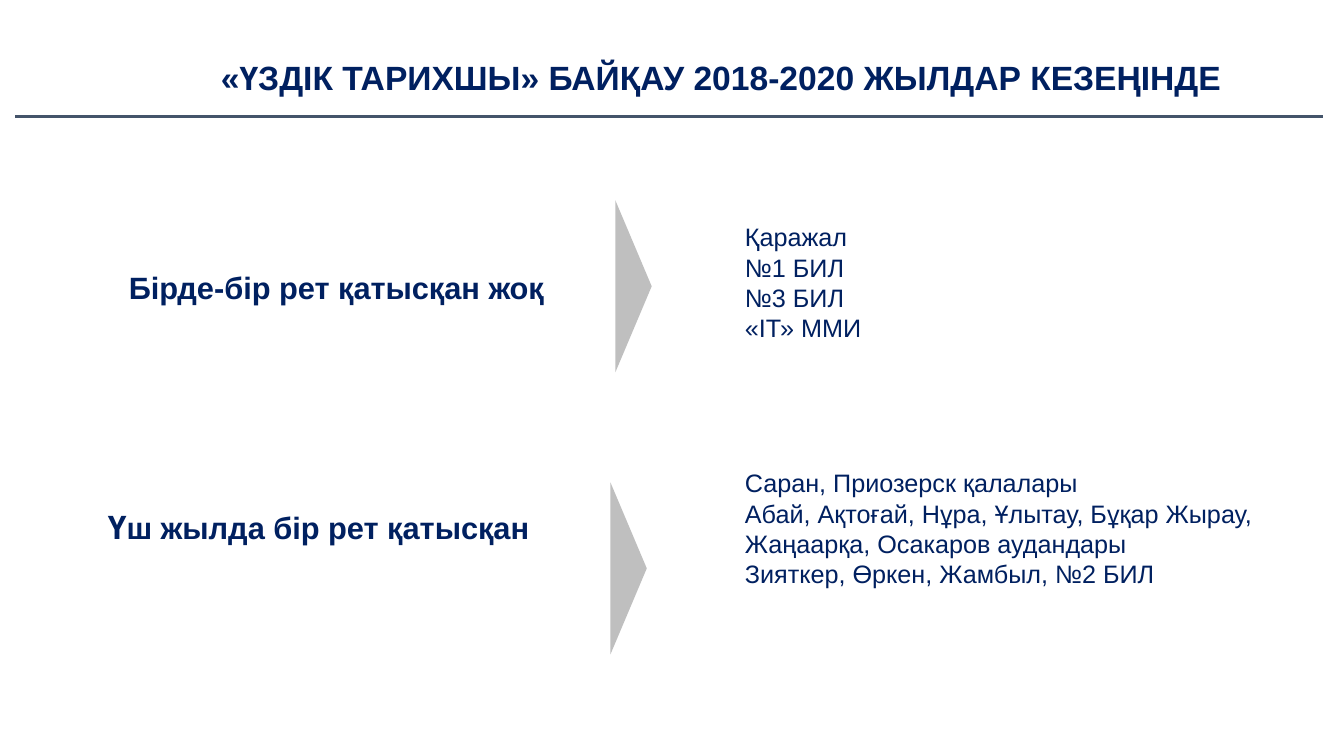
import pptx
import pptx.util
import pptx.dml.color
import pptx.enum.shapes
import pptx.enum.text
import pptx.oxml
from dataclasses import dataclass

Pt = pptx.util.Pt
RGB = pptx.dml.color.RGBColor.from_string


@dataclass(frozen=True)
class Theme:
    font: str = "Arial"
    navy: str = "002060"
    rule: str = "44546A"
    arrow: str = "BFBFBF"
    title: float = 24
    label: float = 22
    body: float = 18


THEME = Theme()

# Offsets are measured from the row box, in points.
ROWS = [
    dict(box=(70, 143, 837, 123), label_at=(15, 45.6), arrow_at=(369.5, 0),
         names_at=(455, 11.8), names_size=(132.5, 94.3),
         label=[("Бірде-бір рет қатысқан жоқ", THEME.label)],
         names=["Қаражал", "№1 БИЛ", "№3 БИЛ", "«ІТ» ММИ"]),
    dict(box=(70, 330.5, 837, 137), label_at=(0, 27.3), arrow_at=(366, 14),
         names_at=(455, 0), names_size=(381.6, 116.6),
         label=[("Ү", THEME.title), ("ш жылда бір рет қатысқан", THEME.label)],
         names=["Саран, Приозерск қалалары",
                "Абай, Ақтоғай, Нұра, Ұлытау, Бұқар Жырау, Жаңаарқа, Осакаров аудандары",
                "Зияткер, Өркен, Жамбыл, №2 БИЛ"]),
]


def place(sp, x, y, w, h):
    sp.left, sp.top, sp.width, sp.height = Pt(x), Pt(y), Pt(w), Pt(h)


def write(tf, paragraphs, bold=False, wrap=True):
    """Fill a text frame with paragraphs, each a list of (text, size) runs."""
    tf.word_wrap = wrap
    tf.vertical_anchor = pptx.enum.text.MSO_ANCHOR.TOP
    for i, runs in enumerate(paragraphs):
        p = tf.paragraphs[0] if i == 0 else tf.add_paragraph()
        for text, size in runs:
            r = p.add_run()
            r.text = text
            r.font.name, r.font.size, r.font.bold = THEME.font, Pt(size), bold
            r.font.color.rgb = RGB(THEME.navy)


def add_text(s, x, y, w, h, paragraphs, **style):
    sp = s.shapes.add_textbox(Pt(x), Pt(y), Pt(w), Pt(h))
    write(sp.text_frame, paragraphs, **style)


def add_arrow(s, x, y, w, h):
    """Right-pointing triangle that shows in the given box."""
    sp = s.shapes.add_shape(pptx.enum.shapes.MSO_SHAPE.ISOSCELES_TRIANGLE, 0, 0, 0, 0)
    place(sp, x + (w - h) / 2, y + (h - w) / 2, h, w)
    sp.rotation = 90
    sp.shadow.inherit = False
    sp.fill.solid()
    sp.fill.fore_color.rgb = RGB(THEME.arrow)
    sp.line.fill.background()


def add_header(s, x, y, w, h):
    sp = s.shapes.title
    place(sp, x + 74, y, w - 74, 36)
    write(sp.text_frame,
          [[("«ҮЗДІК ТАРИХШЫ» БАЙҚАУ 2018-2020 ЖЫЛДАР КЕЗЕҢІНДЕ", THEME.title)]], bold=True)
    p = sp.text_frame.paragraphs[0]
    p.alignment = pptx.enum.text.PP_ALIGN.CENTER
    p.line_spacing = 1.0
    p.space_before = Pt(0)

    line = s.shapes.add_connector(pptx.enum.shapes.MSO_CONNECTOR.STRAIGHT,
                                  Pt(x), Pt(y + h), Pt(x + w), Pt(y + h))
    line.line.color.rgb = RGB(THEME.rule)
    line.line.width = Pt(2.25)
    line._element.spPr.append(pptx.oxml.parse_xml(
        '<a:effectLst xmlns:a="http://schemas.openxmlformats.org/drawingml/2006/main"/>'))


def add_row(s, box, label, label_at, arrow_at, names, names_at, names_size):
    """Label, arrow and list of names, set side by side in the box."""
    x, y, w, h = box
    add_text(s, x + label_at[0], y + label_at[1], 318, 35, [label], bold=True, wrap=False)
    add_arrow(s, x + arrow_at[0], y + arrow_at[1], 26, 123)
    add_text(s, x + names_at[0], y + names_at[1], *names_size,
             [[(name, THEME.body)] for name in names])


def main():
    prs = pptx.Presentation()
    prs.slide_width, prs.slide_height = Pt(960), Pt(540)
    s = prs.slides.add_slide(prs.slide_layouts[5])
    add_header(s, 11, 36.7, 934, 46.3)
    for row in ROWS:
        add_row(s, **row)
    prs.save("out.pptx")


if __name__ == "__main__":
    main()
